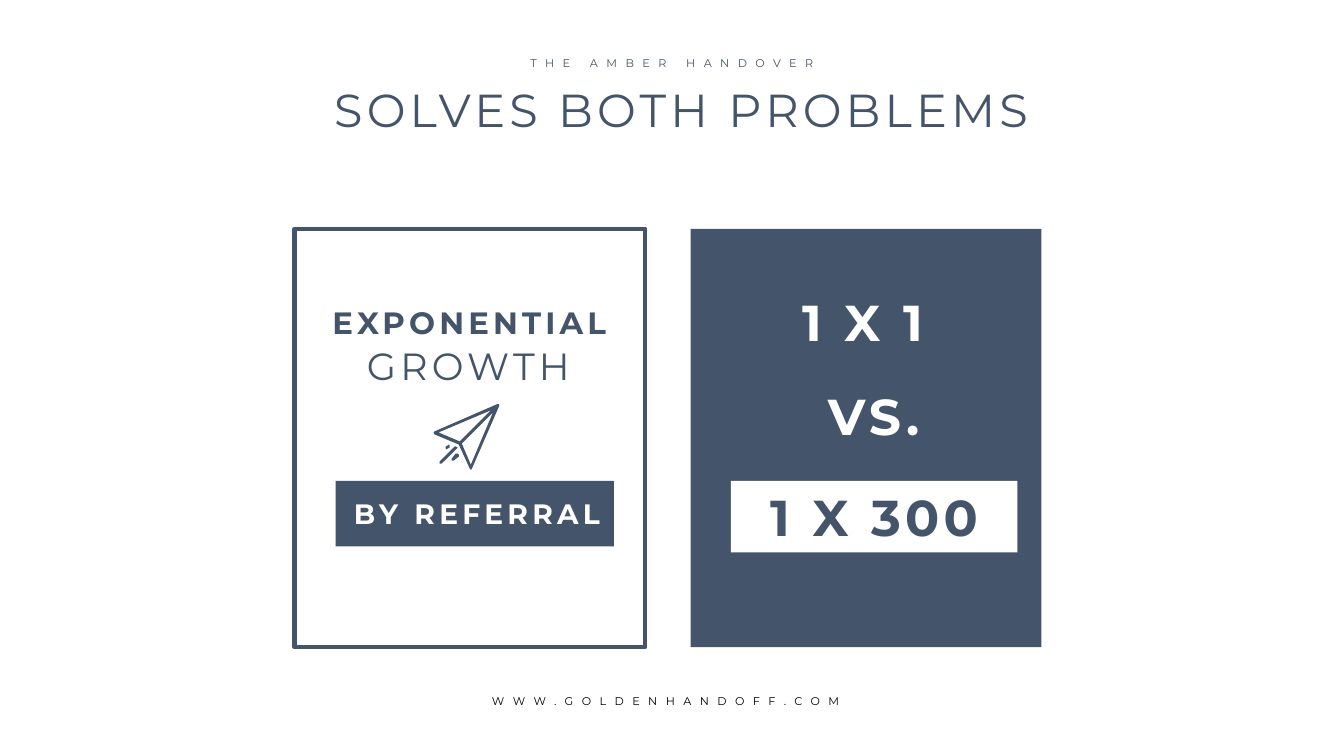
from pptx import Presentation
from pptx.dml.color import RGBColor
from pptx.enum.shapes import MSO_SHAPE
from pptx.enum.text import MSO_ANCHOR, PP_ALIGN
from pptx.util import Inches, Pt

RECTANGLE = MSO_SHAPE.RECTANGLE
TOP = MSO_ANCHOR.TOP
LEFT, CENTER = PP_ALIGN.LEFT, PP_ALIGN.CENTER
SLATE = RGBColor(0x44, 0x54, 0x6A)
WHITE = RGBColor(0xFF, 0xFF, 0xFF)
BLACK = RGBColor(0, 0, 0)
FONT = "Montserrat"

presentation = Presentation()
presentation.slide_width = Inches(13.33)
presentation.slide_height = Inches(7.5)
slide = presentation.slides.add_slide(presentation.slide_layouts[6])


def add_panel(left, top, width, height, fill=None):
    shape = slide.shapes.add_shape(
        RECTANGLE, Inches(left), Inches(top), Inches(width), Inches(height))
    shape.shadow.inherit = False
    if fill is None:
        shape.fill.background()
        shape.line.color.rgb = SLATE
        shape.line.width = Pt(3)
    else:
        shape.fill.solid()
        shape.fill.fore_color.rgb = fill
        shape.line.fill.background()
    return shape


def write(shape, text, size, color, bold=False, spacing=3, align=CENTER):
    frame = shape.text_frame
    frame.word_wrap = True
    frame.vertical_anchor = TOP
    paragraph = frame.paragraphs[0]
    paragraph.alignment = align
    run = paragraph.add_run()
    run.text = text
    run.font.name = FONT
    run.font.size = Pt(size)
    run.font.bold = bold
    run.font.color.rgb = color
    run.font._element.set("spc", str(spacing * 100))


add_panel(2.92, 2.27, 3.48, 4.15)
add_panel(6.85, 2.27, 3.48, 4.15, SLATE)
add_panel(3.33, 4.77, 2.76, 0.65, SLATE)
result_panel = add_panel(7.25, 4.77, 2.84, 0.71, WHITE)
write(result_panel, "1 X 300", 36, SLATE, True)

labels = [
    (3.19, 0.76, 7.14, 0.66, "SOLVES BOTH PROBLEMS", 33, SLATE, False, 3, CENTER),
    (4.95, 0.51, 3.43, 0.24, "THE AMBER HANDOVER", 8, SLATE, False, 6, CENTER),
    (3.12, 2.96, 3.07, 0.47, "EXPONENTIAL", 22, SLATE, True, 3, CENTER),
    (3.4, 3.35, 2.49, 0.56, "GROWTH", 27, SLATE, False, 3, CENTER),
    (2.77, 4.88, 3.92, 0.44, "BY REFERRAL", 20, WHITE, True, 3, CENTER),
    (7.31, 2.84, 2.49, 0.71, "1 X 1", 36, WHITE, True, 3, CENTER),
    (7.42, 3.77, 2.49, 0.71, "VS.", 36, WHITE, True, 3, CENTER),
    (4.78, 6.84, 3.88, 0.24, "WWW.GOLDENHANDOFF.COM", 8, BLACK, False, 6, LEFT),
]
for left, top, width, height, *style in labels:
    box = slide.shapes.add_textbox(
        Inches(left), Inches(top), Inches(width), Inches(height))
    write(box, *style)

plane_outline = [(430, 429), (431, 428), (493, 401), (495, 401), (495, 403),
                 (468, 465), (467, 466), (466, 465), (455, 441), (431, 431)]
right_wing = [(467, 461), (458, 440), (489, 409)]
left_wing = [(435, 429), (487, 407), (456, 438)]
trails = [
    [(454, 450), (452, 450), (448, 455), (448, 457), (450, 457), (455, 453), (455, 451)],
    [(454, 444), (452, 443), (451, 443), (436, 458), (436, 460), (438, 460), (453, 445)],
    [(444, 445), (446, 444), (446, 442), (445, 441), (444, 442), (442, 443), (442, 445), (443, 446)],
]
builder = slide.shapes.build_freeform(*plane_outline[0], scale=Inches(0.01))
builder.add_line_segments(plane_outline[1:], close=True)
for contour in [right_wing, left_wing, *trails]:
    builder.move_to(*contour[0])
    builder.add_line_segments(contour[1:], close=True)
plane = builder.convert_to_shape()
plane.shadow.inherit = False
plane.fill.solid()
plane.fill.fore_color.rgb = SLATE
plane.line.fill.background()

presentation.save("out.pptx")
